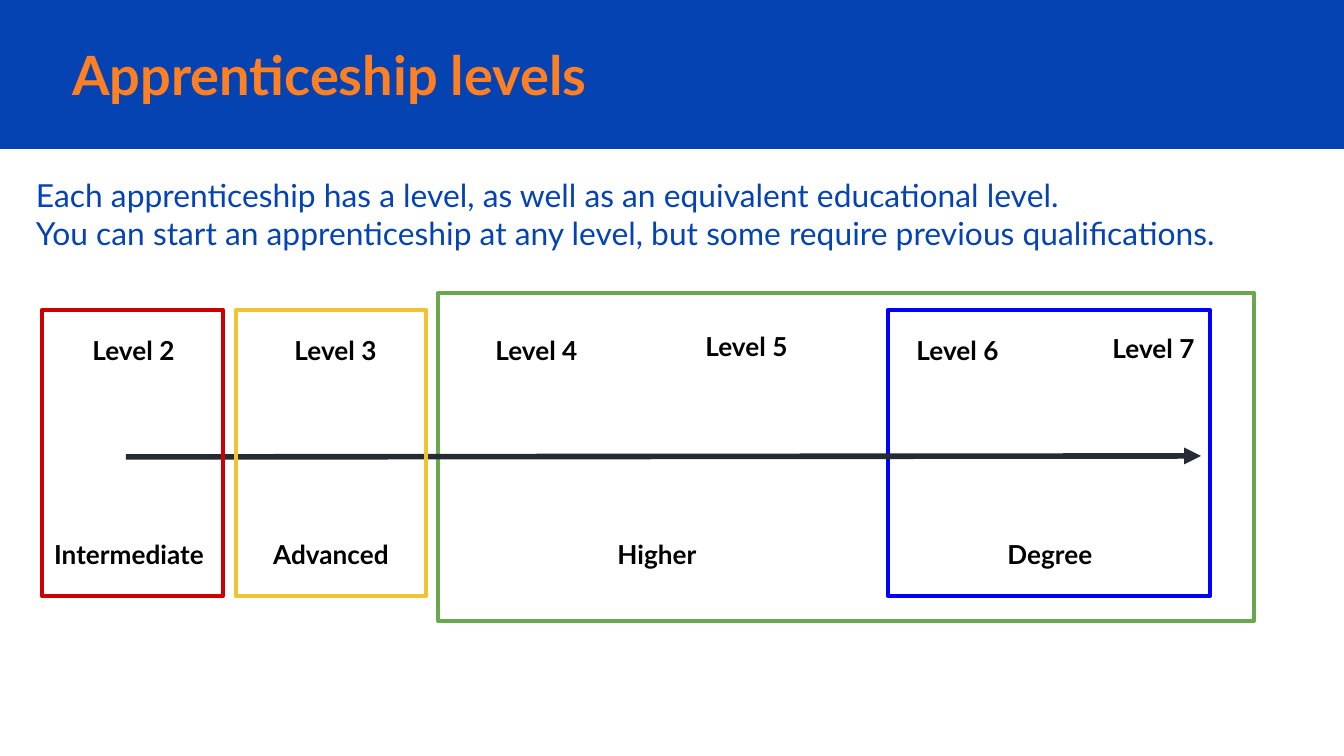
from lxml.etree import SubElement
from pptx import Presentation
from pptx.dml.color import RGBColor
from pptx.enum.shapes import MSO_CONNECTOR, MSO_SHAPE
from pptx.enum.text import MSO_ANCHOR, MSO_AUTO_SIZE, PP_ALIGN
from pptx.oxml.ns import qn
from pptx.util import Pt

EMU_PER_PX = 914400 / 134.4
WIDTH, HEIGHT = 1344, 756
COLORS = {
    "band": "0543B3", "title": "FF8022", "label": "000000", "arrow": "262A33",
    "intermediate": "CC0000", "advanced": "F1C232",
    "higher": "6AA84F", "degree": "0000FF",
}
LABEL_HEIGHT = 59
LEVEL_WIDTH = 133
LEVELS = [  # text, left, top
    ("Level 2", 67, 321), ("Level 3", 269, 321), ("Level 4", 470, 321),
    ("Level 5", 680, 317), ("Level 6", 891, 321), ("Level 7", 1087, 319),
]
STAGE_TOP = 525
STAGES = [  # text, left, width
    ("Intermediate", 35, 188), ("Advanced", 237, 188),
    ("Higher", 567, 180), ("Degree", 960, 180),
]
FRAME_TOP, FRAME_HEIGHT = 310, 286


def px(*lengths):
    return [round(length * EMU_PER_PX) for length in lengths]


def color(name):
    return RGBColor.from_string(COLORS[name])


def write(frame, text, *, size, fill, font="Lato", bold=False,
          align=PP_ALIGN.LEFT, anchor=MSO_ANCHOR.TOP):
    """Fill a text frame, one paragraph for each line of the text."""
    frame.text = text
    frame.word_wrap = True
    frame.auto_size = MSO_AUTO_SIZE.NONE
    frame.vertical_anchor = anchor
    inset, = px(13)
    frame.margin_left = frame.margin_right = inset
    frame.margin_top = frame.margin_bottom = inset
    for paragraph in frame.paragraphs:
        paragraph.alignment = align
        for run in paragraph.runs:
            run.font.name = font
            run.font.size = Pt(size)
            run.font.bold = bold
            run.font.color.rgb = color(fill)


class SlideBuilder:
    frame_width = 2.25
    arrow_width = 3

    def __init__(self, slide):
        self.slide = slide
        self.shapes = slide.shapes

    def title(self, text, *box):
        shape = self.shapes.title
        shape.left, shape.top, shape.width, shape.height = px(*box)
        write(shape.text_frame, text, size=29, fill="title", bold=True,
              anchor=MSO_ANCHOR.MIDDLE)

    def band(self, *box):
        """Draw the header band behind the title."""
        shape = self.shapes.add_shape(MSO_SHAPE.RECTANGLE, *px(*box))
        shape.shadow.inherit = False
        shape.fill.solid()
        shape.fill.fore_color.rgb = color("band")
        shape.line.fill.background()
        self.shapes.title.element.addprevious(shape.element)

    def text(self, text, *box, **style):
        shape = self.shapes.add_textbox(*px(*box))
        write(shape.text_frame, text, **style)

    def label(self, text, *box):
        self.text(text, *box, size=14, fill="label", bold=True,
                  align=PP_ALIGN.CENTER)

    def frame(self, name, *box):
        shape = self.shapes.add_shape(MSO_SHAPE.RECTANGLE, *px(*box))
        shape.shadow.inherit = False
        shape.fill.background()
        shape.line.color.rgb = color(name)
        shape.line.width = Pt(self.frame_width)
        SubElement(shape.line._get_or_add_ln(), qn("a:round"))

    def arrow(self, *ends):
        connector = self.shapes.add_connector(MSO_CONNECTOR.STRAIGHT, *px(*ends))
        connector.line.color.rgb = color("arrow")
        connector.line.width = Pt(self.arrow_width)
        properties = connector.element.spPr
        SubElement(properties.find(qn("a:ln")), qn("a:tailEnd"), type="triangle")
        SubElement(properties, qn("a:effectLst"))


def main():
    presentation = Presentation()
    presentation.slide_width, presentation.slide_height = px(WIDTH, HEIGHT)
    title_only = presentation.slide_layouts[5]
    builder = SlideBuilder(presentation.slides.add_slide(title_only))

    builder.band(0, 0, WIDTH, 149)
    builder.title("Apprenticeship levels", 59, 28, 1257, 91)
    builder.text(
        "Each apprenticeship has a level, as well as an equivalent educational level.\n"
        "You can start an apprenticeship at any level, but some require previous "
        "qualifications.",
        23, 163, 1300, 103, size=17, fill="band")

    builder.frame("higher", 438, 293, 816, 328)
    builder.frame("degree", 888, FRAME_TOP, 322, FRAME_HEIGHT)
    builder.arrow(126, 457, 1201, 456)
    for text, left, top in LEVELS:
        builder.label(text, left, top, LEVEL_WIDTH, LABEL_HEIGHT)
    for text, left, width in STAGES:
        builder.label(text, left, STAGE_TOP, width, LABEL_HEIGHT)
    builder.frame("intermediate", 42, FRAME_TOP, 181, FRAME_HEIGHT)
    builder.frame("advanced", 236, FRAME_TOP, 190, FRAME_HEIGHT)

    presentation.save("out.pptx")


if __name__ == "__main__":
    main()
